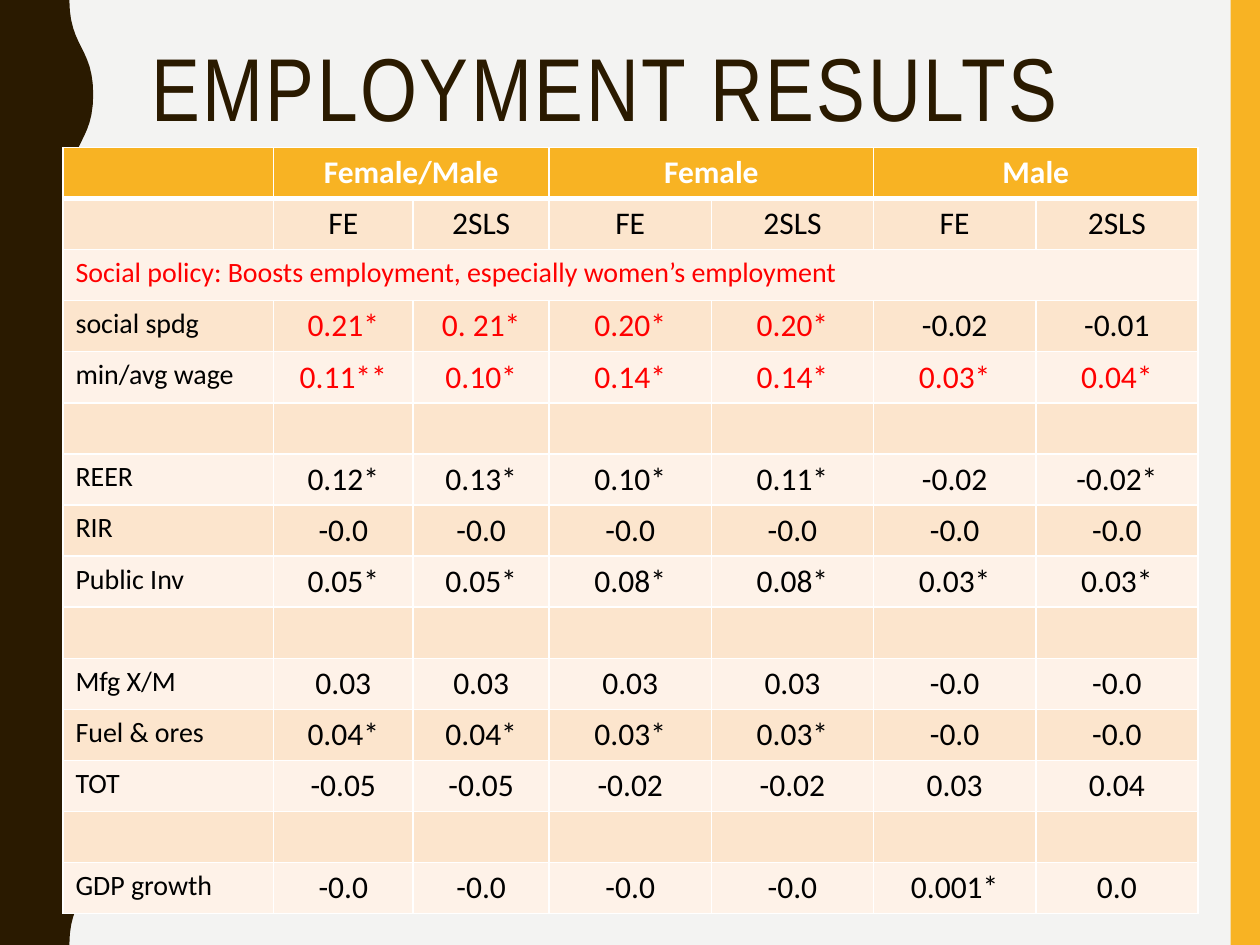
from lxml import etree
from pptx import Presentation
from pptx.dml.color import RGBColor
from pptx.enum.shapes import MSO_SHAPE
from pptx.enum.text import MSO_ANCHOR, MSO_AUTO_SIZE, PP_ALIGN
from pptx.oxml.ns import qn
from pptx.util import Cm, Pt

LEFT, CENTER = PP_ALIGN.LEFT, PP_ALIGN.CENTER
TOP, MIDDLE = MSO_ANCHOR.TOP, MSO_ANCHOR.MIDDLE
RECT, NO_FIT = MSO_SHAPE.RECTANGLE, MSO_AUTO_SIZE.NONE

TITLE = "EMPLOYMENT RESULTS"
GROUPS = ["Female/Male", "Female", "Male"]
MODELS = ["FE", "2SLS"]
NOTE = "Social policy: Boosts employment, especially women’s employment"
POLICY = [
    ["social spdg", "0.21*", "0. 21*", "0.20*", "0.20*", "-0.02", "-0.01"],
    ["min/avg wage", "0.11**", "0.10*", "0.14*", "0.14*", "0.03*", "0.04*"],
]
BLANK = [""] * 7
OTHER = [
    BLANK,
    ["REER", "0.12*", "0.13*", "0.10*", "0.11*", "-0.02", "-0.02*"],
    ["RIR"] + ["-0.0"] * 6,
    ["Public Inv", "0.05*", "0.05*", "0.08*", "0.08*", "0.03*", "0.03*"],
    BLANK,
    ["Mfg X/M", "0.03", "0.03", "0.03", "0.03", "-0.0", "-0.0"],
    ["Fuel & ores", "0.04*", "0.04*", "0.03*", "0.03*", "-0.0", "-0.0"],
    ["TOT", "-0.05", "-0.05", "-0.02", "-0.02", "0.03", "0.04"],
    BLANK,
    ["GDP growth", "-0.0", "-0.0", "-0.0", "-0.0", "0.001*", "0.0"],
]

THEME = {
    "back": "F3F3F2", "dark": "2A1A00", "gold": "F8B323", "white": "FFFFFF",
    "black": "000000", "red": "FF0000", "bands": ["FCE5CD", "FEF2E8"],
    "head": "Arial Narrow", "body": "Calibri",
    "title": 51, "label": 16, "value": 18,
}

# All lengths in centimetres
WIDE, HIGH = 25.4, 19.05
COLS = [4.24, 2.82, 2.74, 3.27, 3.27, 3.27, 3.27]
ROW = 1.03
TABLE_X, TABLE_Y = 1.27, 2.97
BAR = 0.59
INNER, OUTER, WAVES, STEPS = 1.4, 1.88, 5, 12


def color(name):
    return RGBColor.from_string(THEME.get(name, name))


def paint(item, name):
    item.fill.solid()
    item.fill.fore_color.rgb = color(name)


def write(frame, text, size="value", font="body", tint="black", bold=False,
          align=CENTER, space=0, lead=1.0):
    para = frame.paragraphs[0]
    para.alignment, para.line_spacing = align, lead
    if not text:
        return
    run = para.add_run()
    run.text = text
    style = run.font
    style.size, style.name, style.bold = Pt(THEME[size]), THEME[font], bold
    style.color.rgb = color(tint)
    if space:
        run._r.get_or_add_rPr().set("spc", str(space))


def edge(cell, **widths):
    """Draw white cell borders; widths are points by side (L, R, T, B)."""
    props = cell._tc.get_or_add_tcPr()
    for place, (side, width) in enumerate(widths.items()):
        line = etree.Element(qn("a:ln" + side), w=str(Pt(width)))
        fill = etree.SubElement(line, qn("a:solidFill"))
        etree.SubElement(fill, qn("a:srgbClr"), val=THEME["white"])
        props.insert(place, line)


def add_wave(slide):
    """Draw the dark left band, its edge swinging in smooth half waves."""
    half = HIGH / WAVES / 2
    half = 1.905  # one swing, in or out
    points = []
    for turn in range(round(HIGH / half)):
        start, end = (INNER, OUTER) if turn % 2 == 0 else (OUTER, INNER)
        for step in range(1, STEPS + 1):
            t = step / STEPS
            ease = t * t * (3 - 2 * t)
            down = 1.5 * t * (1 - t) + t ** 3
            points.append((Cm(start + (end - start) * ease),
                           Cm(half * (turn + down))))
    pen = slide.shapes.build_freeform(Cm(INNER), 0)
    pen.add_line_segments(points + [(0, Cm(HIGH)), (0, 0)], close=True)
    return pen.convert_to_shape()


def add_frame(slide):
    bar = slide.shapes.add_shape(RECT, Cm(WIDE - BAR), 0, Cm(BAR), Cm(HIGH))
    for shape, name in [(bar, "gold"), (add_wave(slide), "dark")]:
        paint(shape, name)
        shape.line.fill.background()
        shape.shadow.inherit = False


def add_title(slide):
    title = slide.shapes.title
    title.left, title.top = Cm(2.79), Cm(0.76)
    title.width, title.height = Cm(21.34), Cm(2.21)
    frame = title.text_frame
    frame.auto_size, frame.word_wrap = NO_FIT, True
    frame.vertical_anchor = MIDDLE
    write(frame, TITLE, size="title", font="head", tint="dark",
          align=LEFT, space=150, lead=0.9)


def add_results(slide):
    heads = [""] + [word for group in GROUPS for word in (group, "")]
    models = [""] + MODELS * len(GROUPS)
    rows = [heads, models, [NOTE] + BLANK[1:]] + POLICY + OTHER
    table = slide.shapes.add_table(
        len(rows), len(COLS), Cm(TABLE_X), Cm(TABLE_Y),
        Cm(sum(COLS)), Cm(ROW * len(rows))).table
    for column, width in zip(table.columns, COLS):
        column.width = Cm(width)
    for r, row in enumerate(rows):
        table.rows[r].height = Cm(ROW)
        for c, text in enumerate(row):
            cell = table.cell(r, c)
            cell.vertical_anchor = TOP
            paint(cell, "gold" if r == 0 else THEME["bands"][(r - 1) % 2])
            edge(cell, L=1, R=1, T=3 if r == 1 else 1, B=3 if r == 0 else 1)
            hot = text == NOTE or (row in POLICY and "*" in text)
            tint = "white" if r == 0 else "red" if hot else "black"
            write(cell.text_frame, text, tint=tint, bold=r == 0,
                  size="value" if c else "label",
                  align=CENTER if c else LEFT)
    for c in range(1, len(COLS), len(MODELS)):
        table.cell(0, c).merge(table.cell(0, c + 1))
    table.cell(2, 0).merge(table.cell(2, len(COLS) - 1))


def main():
    deck = Presentation()
    deck.slide_width, deck.slide_height = Cm(WIDE), Cm(HIGH)
    slide = deck.slides.add_slide(deck.slide_layouts[5])
    paint(slide.background, "back")
    add_frame(slide)
    add_title(slide)
    add_results(slide)
    deck.save("out.pptx")


if __name__ == "__main__":
    main()
